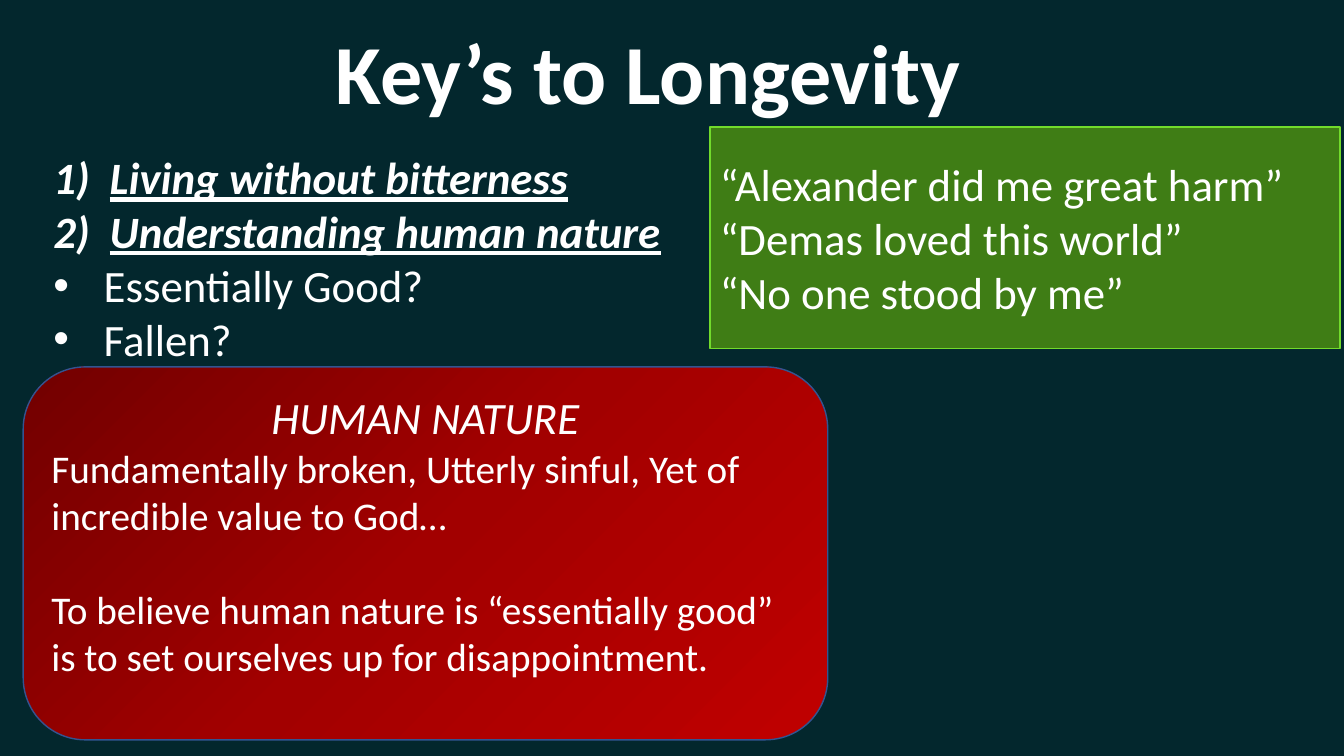
from dataclasses import dataclass

from pptx import Presentation
from pptx import util as u
from pptx.dml.color import RGBColor
from pptx.enum import shapes, text
from pptx.oxml import parse_xml
from pptx.oxml.ns import nsdecls, qn

PX = 9144


@dataclass(frozen=True)
class Theme:
    font: str = "Calibri"
    ink: str = "FFFFFF"
    backdrop: str = "03272D"
    quote_fill: str = "3F7D15"
    quote_line: str = "72DB2B"
    nature_line: str = "325491"
    nature_stops: tuple = ((0, "720000"), (50, "A20000"), (100, "C00000"))
    title: int = 60
    lead: int = 32
    body: int = 28


THEME = Theme()
NUMBER = '<a:buAutoNum {} type="arabicParenR"/>'
DOT = '<a:buChar {} char="•"/>'


def px(*lengths):
    return [u.Emu(length * PX) for length in lengths]


def rgb(code):
    return RGBColor.from_string(code)


def element(markup):
    return parse_xml(markup.format(nsdecls("a")))


def write(frame, lines, size, **emphasis):
    frame.word_wrap = True
    frame.text = "\n".join(lines)
    for line in frame.paragraphs:
        line.alignment = text.PP_ALIGN.LEFT
        style(line, size, **emphasis)
    return frame.paragraphs


def style(line, size, **emphasis):
    for run in line.runs:
        run.font.name = THEME.font
        run.font.size = u.Pt(size)
        run.font.color.rgb = rgb(THEME.ink)
        for trait, value in emphasis.items():
            setattr(run.font, trait, value)


def panel(slide, preset, box, fill, line=None):
    plate = slide.shapes.add_shape(preset, *px(*box))
    plate.shadow.inherit = False
    plate.fill.solid()
    plate.fill.fore_color.rgb = rgb(fill)
    if line:
        plate.line.color.rgb = rgb(line)
        plate.line.width = u.Pt(1)
    else:
        plate.line.fill.background()
    return plate


def add_bullet(line, marker, indent):
    properties = line._p.get_or_add_pPr()
    properties.set("marL", str(indent * PX))
    properties.set("indent", str(-indent * PX))
    if marker == DOT:
        properties.append(element('<a:buFont {} typeface="Arial"/>'))
    properties.append(element(marker))


def keys_list(slide, box):
    plate = panel(slide, shapes.MSO_SHAPE.RECTANGLE, box, THEME.backdrop)
    plate.text_frame.vertical_anchor = text.MSO_ANCHOR.TOP
    keys = ["Living without bitterness", "Understanding human nature"]
    questions = ["Essentially Good?", "Fallen?"]
    lines = write(plate.text_frame, keys + questions, THEME.lead)
    for line in lines[:len(keys)]:
        style(line, THEME.lead, bold=True, italic=True, underline=True)
        add_bullet(line, NUMBER, 56)
    for line in lines[len(keys):]:
        add_bullet(line, DOT, 50)


def quotes(slide, box):
    plate = panel(slide, shapes.MSO_SHAPE.RECTANGLE, box, THEME.quote_fill, THEME.quote_line)
    plate.text_frame.vertical_anchor = text.MSO_ANCHOR.MIDDLE
    write(plate.text_frame, ["“Alexander did me great harm”", "“Demas loved this world”",
                             "“No one stood by me”"], THEME.lead)


def title(slide, box):
    heading = slide.shapes.add_textbox(*px(*box))
    write(heading.text_frame, ["Key’s to Longevity"], THEME.title, bold=True)
    heading.text_frame.auto_size = text.MSO_AUTO_SIZE.SHAPE_TO_FIT_TEXT


def radial_fill(plate, stops):
    marks = "".join(f'<a:gs pos="{share * 1000}"><a:srgbClr val="{code}"/></a:gs>'
                    for share, code in stops)
    gradient = element("<a:gradFill {} rotWithShape=\"1\"><a:gsLst>" + marks + "</a:gsLst>"
                       '<a:path path="circle"><a:fillToRect r="100000" b="100000"/></a:path>'
                       "</a:gradFill>")
    properties = plate._element.spPr
    properties.replace(properties.find(qn("a:solidFill")), gradient)


def human_nature(slide, box):
    plate = panel(slide, shapes.MSO_SHAPE.ROUNDED_RECTANGLE, box,
                  THEME.nature_stops[0][1], THEME.nature_line)
    radial_fill(plate, THEME.nature_stops)
    plate.text_frame.vertical_anchor = text.MSO_ANCHOR.TOP
    heading, _, warning = write(plate.text_frame, [
        "HUMAN NATURE",
        "Fundamentally broken, Utterly sinful, Yet of incredible value to God…",
        "To believe human nature is “essentially good” is to set ourselves up for disappointment.",
    ], THEME.body)
    heading.alignment = text.PP_ALIGN.CENTER
    style(heading, THEME.lead, italic=True)
    warning.space_before = u.Pt(34)


def main():
    deck = Presentation()
    deck.slide_width, deck.slide_height = px(1333, 750)
    slide = deck.slides.add_slide(deck.slide_layouts[6])
    slide.background.fill.solid()
    slide.background.fill.fore_color.rgb = rgb(THEME.backdrop)
    keys_list(slide, (43, 144, 642, 516))
    quotes(slide, (704, 126, 625, 220))
    title(slide, (323, 15, 711, 111))
    human_nature(slide, (23, 364, 798, 370))
    deck.save("out.pptx")


if __name__ == "__main__":
    main()
